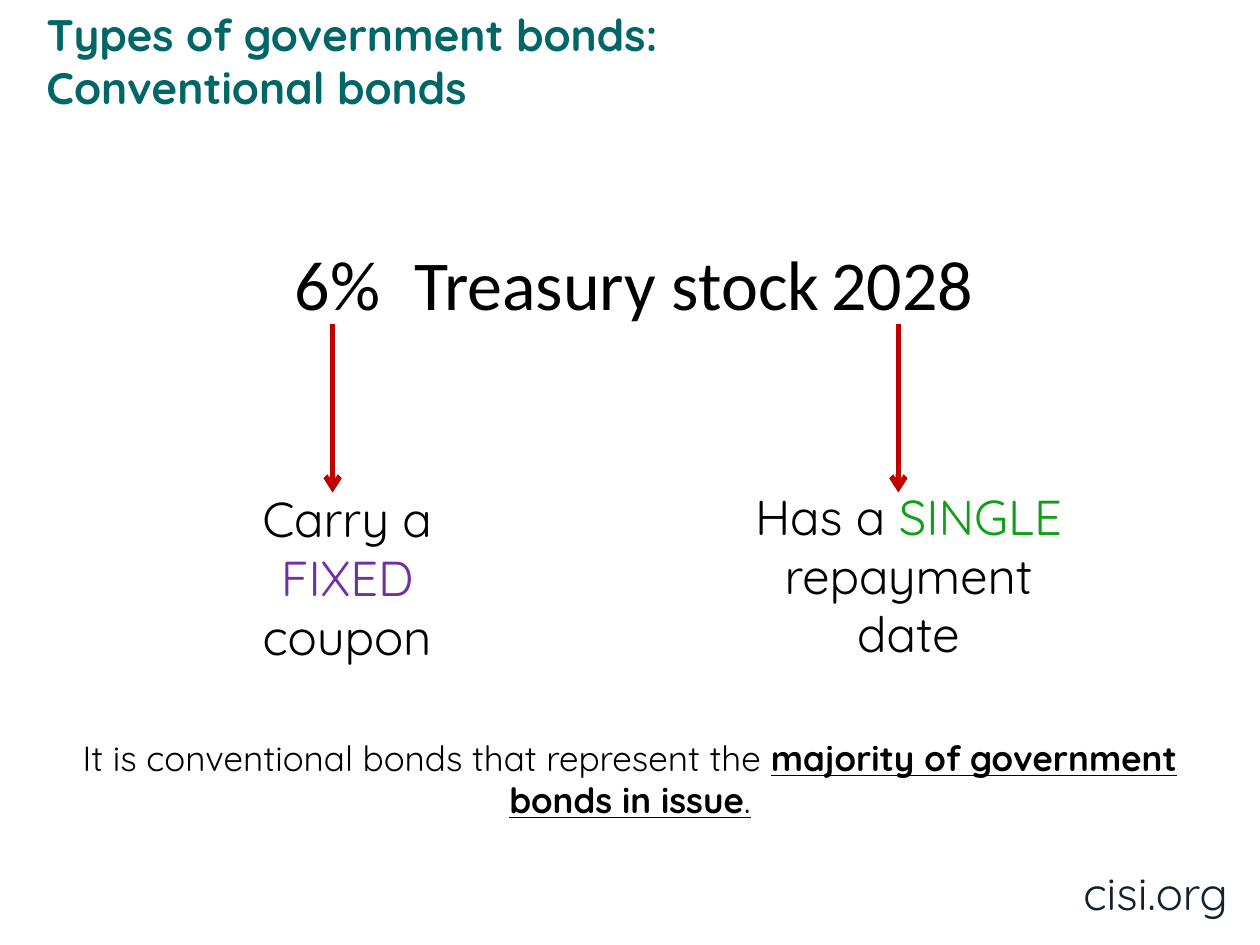
from lxml import etree
from pptx import Presentation
from pptx.dml.color import RGBColor
from pptx.enum.shapes import MSO_CONNECTOR
from pptx.enum.text import MSO_ANCHOR, PP_ALIGN
from pptx.oxml.ns import qn
from pptx.util import Inches, Pt

STRAIGHT = MSO_CONNECTOR.STRAIGHT
LEFT, CENTER = PP_ALIGN.LEFT, PP_ALIGN.CENTER
TOP, MIDDLE = MSO_ANCHOR.TOP, MSO_ANCHOR.MIDDLE

BLACK = RGBColor(0x00, 0x00, 0x00)
TEAL = RGBColor(0x00, 0x66, 0x66)
NAVY = RGBColor(0x12, 0x20, 0x31)
RED = RGBColor(0xC0, 0x00, 0x00)
PURPLE = RGBColor(0x70, 0x30, 0xA0)
GREEN = RGBColor(0x10, 0xA0, 0x17)

BODY_FONT = "Quicksand"
STOCK_FONT = "Calibri"
STOCK_TOP, STOCK_HEIGHT = 1.86, 0.77
ARROW_TOP, ARROW_BOTTOM = 2.57, 3.91


def add_run(p, text, font=BODY_FONT, size=28, color=BLACK, bold=False, underline=False):
    r = p.add_run()
    r.text = text
    r.font.name = font
    r.font.size = Pt(size)
    r.font.color.rgb = color
    r.font.bold = bold
    r.font.underline = underline


def add_text(s, box, lines, align=LEFT, anchor=TOP, wrap=True):
    tf = s.shapes.add_textbox(*map(Inches, box)).text_frame
    tf.word_wrap = wrap
    tf.vertical_anchor = anchor
    p = tf.paragraphs[0]
    p.alignment = align
    for i, runs in enumerate(lines):
        if i:
            p.add_line_break()
        for text, style in runs:
            add_run(p, text, **style)


def add_arrow(s, x):
    sp = s.shapes.add_connector(
        STRAIGHT, Inches(x), Inches(ARROW_TOP), Inches(x), Inches(ARROW_BOTTOM))
    sp.line.color.rgb = RED
    sp.line.width = Pt(3)
    etree.SubElement(sp.line._get_or_add_ln(), qn("a:tailEnd"), type="arrow")
    etree.SubElement(sp._element.spPr, qn("a:effectLst"))


def main():
    prs = Presentation()
    prs.slide_width, prs.slide_height = Inches(10), Inches(7.5)
    s = prs.slides.add_slide(prs.slide_layouts[6])

    add_text(s, (8.5, 6.82, 1.5, 0.54),
             [[("cisi.org", dict(size=26, color=NAVY))]])

    title = dict(size=25.2, color=TEAL, bold=True)
    add_text(s, (0.27, 0.21, 8.03, 0.54),
             [[("Types of government bonds:", title)], [("Conventional bonds", title)]],
             anchor=MIDDLE)

    stock = dict(font=STOCK_FONT, size=40)
    for text, x, width in (("6%", 2.24, 0.89),
                           ("Treasury stock", 3.19, 3.58),
                           ("2028", 6.5, 1.34)):
        add_text(s, (x, STOCK_TOP, width, STOCK_HEIGHT), [[(text, stock)]], wrap=False)

    for x in (2.64, 7.13):
        add_arrow(s, x)

    add_text(s, (1.69, 3.83, 2.13, 1.52),
             [[("Carry a ", {}), ("FIXED", dict(color=PURPLE)), (" coupon", {})]],
             align=CENTER)
    add_text(s, (5.87, 3.81, 2.68, 1.51),
             [[("Has a ", {}), ("SINGLE ", dict(color=GREEN)), ("repayment date", {})]],
             align=CENTER)

    add_text(s, (0.43, 5.8, 9.14, 0.77),
             [[("It is conventional bonds that represent the ", dict(size=20)),
               ("majority of government bonds in issue",
                dict(size=20, bold=True, underline=True)),
               (".", dict(size=20, underline=True))]],
             align=CENTER)

    prs.save("out.pptx")


if __name__ == "__main__":
    main()
